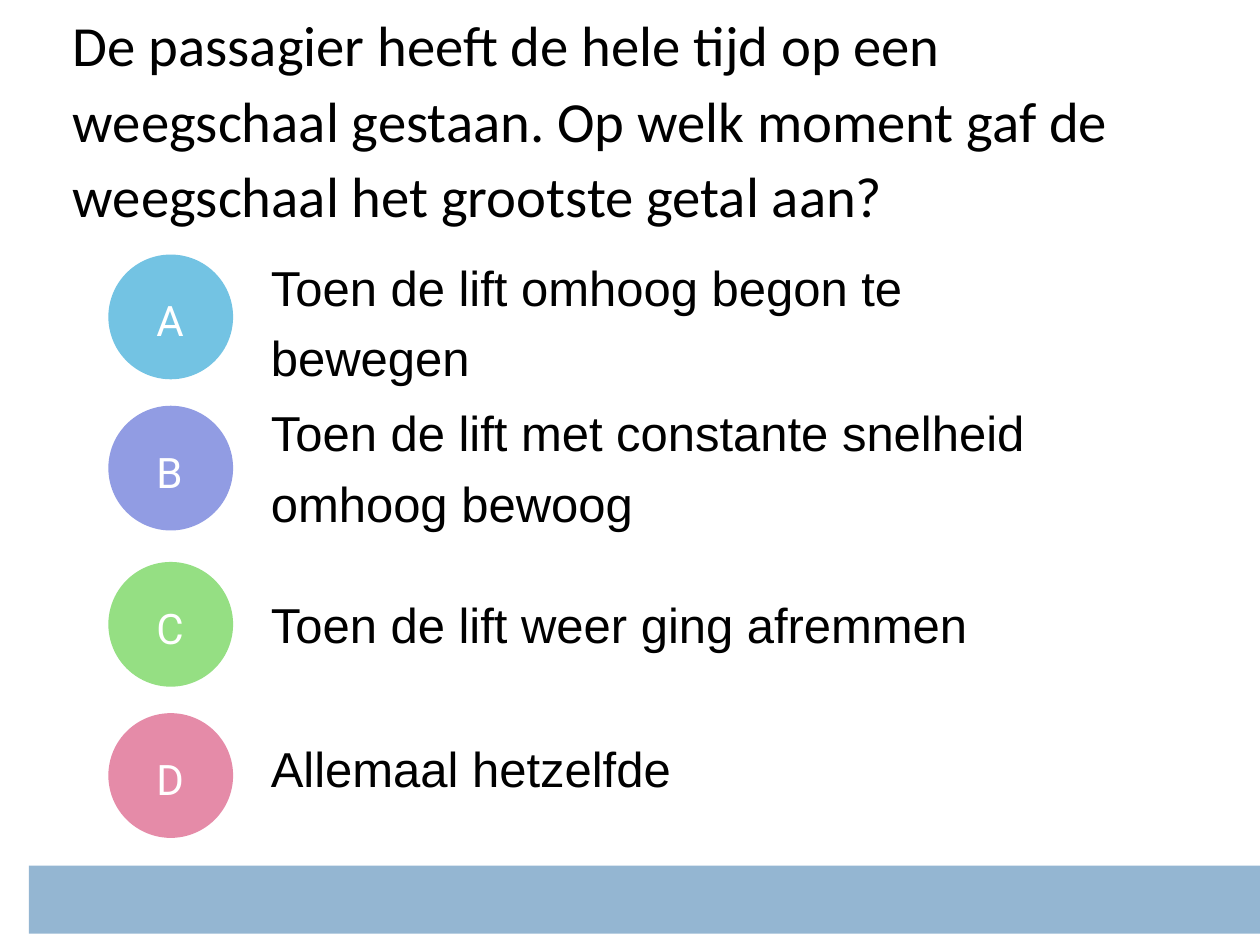
from pptx import Presentation
from pptx import util as u
from pptx.dml.color import RGBColor
from pptx.enum import shapes, text

BLACK = RGBColor(0x00, 0x00, 0x00)
WHITE = RGBColor(0xFF, 0xFF, 0xFF)
BAND = RGBColor(0x94, 0xB6, 0xD2)
SKY = RGBColor(0x73, 0xC3, 0xE3)
PERIWINKLE = RGBColor(0x91, 0x9C, 0xE3)
GREEN = RGBColor(0x95, 0xDF, 0x83)
PINK = RGBColor(0xE5, 0x8B, 0xA8)

QUESTION = ("De passagier heeft de hele tijd op een weegschaal gestaan. "
            "Op welk moment gaf de weegschaal het grootste getal aan?")
# letter, colour, badge top, answer top, answer height, answer
ANSWERS = [
    ("A", SKY, 2.02, 1.93, 1.16, "Toen de lift omhoog begon te bewegen"),
    ("B", PERIWINKLE, 3.22, 3.08, 1.17,
     "Toen de lift met constante snelheid omhoog bewoog"),
    ("C", GREEN, 4.46, 4.6, 0.61, "Toen de lift weer ging afremmen"),
    ("D", PINK, 5.66, 5.74, 0.61, "Allemaal hetzelfde"),
]


class QuizSlide:
    TITLE = {"name": "Calibri", "size": u.Pt(32.4)}
    LETTER = {"name": "Roboto", "size": u.Pt(24)}
    ANSWER = {"name": "Arial", "size": u.Pt(28)}

    def __init__(self, slide):
        self.slide = slide

    def solid(self, parent, preset, box, colour):
        shape = parent.add_shape(preset, *map(u.Inches, box))
        shape.shadow.inherit = False
        shape.fill.solid()
        shape.fill.fore_color.rgb = colour
        shape.line.fill.background()

    def label(self, parent, box, words, font, colour=BLACK, spacing=1.2,
              anchor=text.MSO_ANCHOR.MIDDLE, insets=(0.04, 0.04)):
        frame = parent.add_textbox(*map(u.Inches, box)).text_frame
        side, end = map(u.Inches, insets)
        frame_format = {
            "word_wrap": True, "vertical_anchor": anchor,
            "margin_left": side, "margin_right": side,
            "margin_top": end, "margin_bottom": end,
        }
        for key, value in frame_format.items():
            setattr(frame, key, value)
        paragraph = frame.paragraphs[0]
        paragraph.line_spacing = spacing
        run = paragraph.add_run()
        run.text = words
        for key, value in font.items():
            setattr(run.font, key, value)
        run.font.color.rgb = colour

    def band(self):
        self.solid(self.slide.shapes, shapes.MSO_SHAPE.RECTANGLE,
                   (0.23, 6.87, 9.77, 0.54), BAND)

    def question(self, words):
        self.label(self.slide.shapes, (0.48, -0.03, 9.27, 0.94), words,
                   self.TITLE, spacing=1.11, anchor=text.MSO_ANCHOR.TOP,
                   insets=(0.1, 0.05))

    def badge(self, letter, colour, top):
        group = self.slide.shapes.add_group_shape().shapes
        self.solid(group, shapes.MSO_SHAPE.OVAL, (0.86, top, 0.99, 0.99), colour)
        self.label(group, (1.2, top + 0.22, 0.39, 0.52), letter,
                   self.LETTER, WHITE)

    def answer(self, words, top, height):
        self.label(self.slide.shapes, (2.11, top, 6.73, height), words,
                   self.ANSWER)


def main():
    deck = Presentation()
    deck.slide_width, deck.slide_height = u.Inches(10), u.Inches(7.5)
    quiz = QuizSlide(deck.slides.add_slide(deck.slide_layouts[6]))
    quiz.band()
    quiz.question(QUESTION)
    for letter, colour, badge_top, top, height, words in ANSWERS:
        quiz.badge(letter, colour, badge_top)
        quiz.answer(words, top, height)
    deck.save("out.pptx")


if __name__ == "__main__":
    main()
